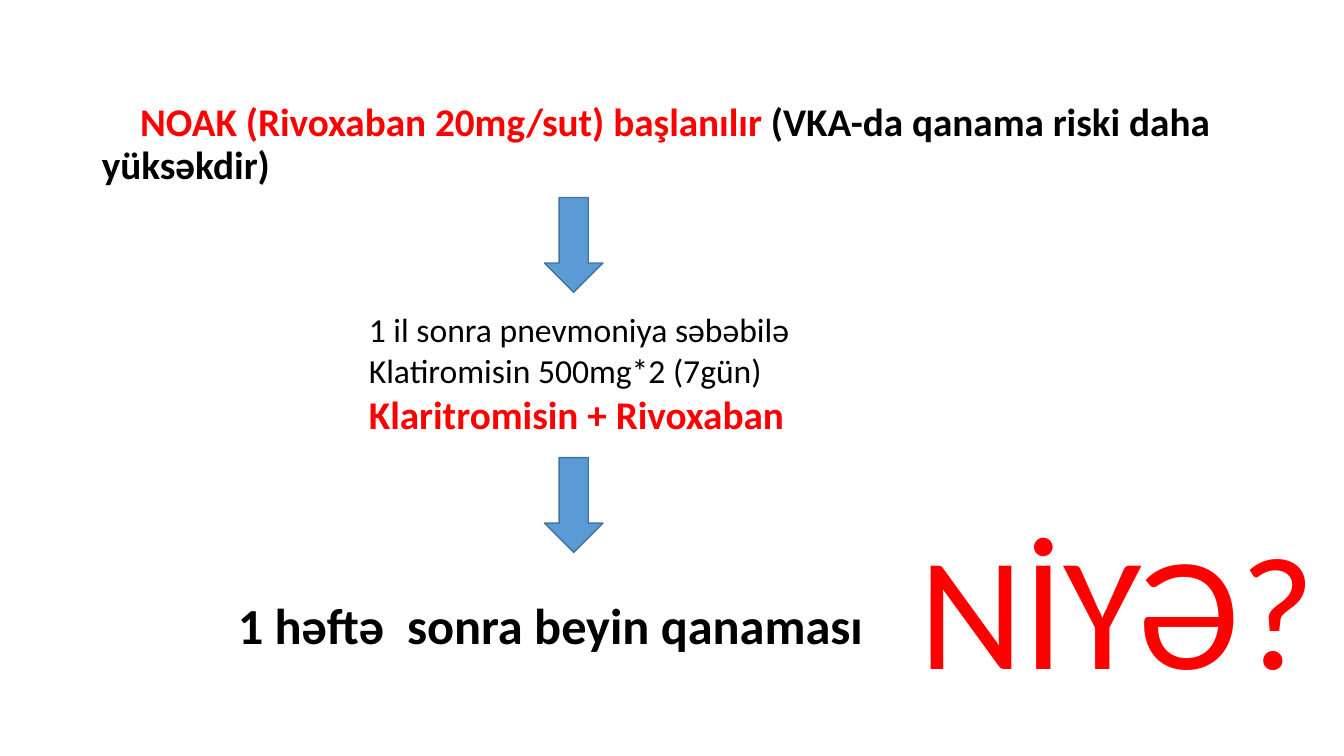
from dataclasses import dataclass

from pptx import Presentation
from pptx.dml.color import RGBColor
from pptx.enum.shapes import MSO_SHAPE
from pptx.enum.text import MSO_ANCHOR, MSO_AUTO_SIZE, PP_ALIGN
from pptx.util import Inches, Pt

DOWN_ARROW = MSO_SHAPE.DOWN_ARROW
TOP = MSO_ANCHOR.TOP
LEFT = PP_ALIGN.LEFT
NO_AUTOFIT = MSO_AUTO_SIZE.NONE
TITLE_ONLY_LAYOUT = 5


@dataclass(frozen=True)
class Theme:
    font: str = "Calibri"
    text: RGBColor = RGBColor(0, 0, 0)
    accent: RGBColor = RGBColor(0xFF, 0, 0)
    arrow_fill: RGBColor = RGBColor(0x5B, 0x9B, 0xD5)
    arrow_line: RGBColor = RGBColor(0x43, 0x73, 0x9E)
    body: int = 24
    heading: int = 28
    outcome: int = 36
    question: int = 115


THEME = Theme()


def place(shape, box):
    shape.left, shape.top, shape.width, shape.height = (Inches(value) for value in box)


def prepare_frame(shape):
    """Return the shape's text frame, wrapped and anchored at the top."""
    frame = shape.text_frame
    frame.word_wrap = True
    frame.auto_size = NO_AUTOFIT
    frame.vertical_anchor = TOP
    return frame


def write(paragraph, text, *, size, color=THEME.text, bold=False, indent=0):
    """Append a formatted run; indent shifts the first line, in inches."""
    paragraph.alignment = LEFT
    if indent:
        paragraph._p.get_or_add_pPr().set("indent", str(Inches(indent)))
    run = paragraph.add_run()
    run.text = text
    font = run.font
    font.name, font.size, font.bold = THEME.font, Pt(size), bold
    font.color.rgb = color


def add_text_box(slide, box):
    return prepare_frame(slide.shapes.add_textbox(*(Inches(value) for value in box)))


def add_treatment_title(slide, box):
    title = slide.shapes.title
    place(title, box)
    paragraph = prepare_frame(title).paragraphs[0]
    paragraph.line_spacing = 0.9
    write(paragraph, "NOAK (Rivoxaban 20mg/sut) başlanılır ", size=THEME.heading,
          color=THEME.accent, bold=True, indent=0.38)
    write(paragraph, "(VKA-da qanama riski daha yüksəkdir)", size=THEME.heading, bold=True)


def add_down_arrow(slide, box):
    arrow = slide.shapes.add_shape(DOWN_ARROW, *(Inches(value) for value in box))
    arrow.shadow.inherit = False
    arrow.fill.solid()
    arrow.fill.fore_color.rgb = THEME.arrow_fill
    arrow.line.color.rgb = THEME.arrow_line
    arrow.line.width = Pt(1)


def add_interaction(slide, box):
    frame = add_text_box(slide, box)
    write(frame.paragraphs[0], "1 il sonra pnevmoniya səbəbilə Klatiromisin 500mg*2 (7gün)",
          size=THEME.body)
    write(frame.add_paragraph(), "Klaritromisin + Rivoxaban", size=THEME.heading,
          color=THEME.accent, bold=True)


def add_outcome(slide, box):
    frame = add_text_box(slide, box)
    write(frame.paragraphs[0], "1 həftə  sonra beyin qanaması", size=THEME.outcome,
          bold=True, indent=0.79)


def add_question(slide, box):
    frame = add_text_box(slide, box)
    write(frame.paragraphs[0], "NİYƏ?", size=THEME.question, color=THEME.accent)


def main():
    presentation = Presentation()
    presentation.slide_width = Inches(13.33)
    presentation.slide_height = Inches(7.5)
    slide = presentation.slides.add_slide(presentation.slide_layouts[TITLE_ONLY_LAYOUT])

    add_treatment_title(slide, (0.91, 0.97, 12.05, 0.95))
    for arrow_top in (1.96, 4.54):
        add_down_arrow(slide, (5.4, arrow_top, 0.58, 0.94))
    add_interaction(slide, (3.56, 3.02, 5.01, 1.38))
    add_outcome(slide, (1.47, 5.84, 7.98, 0.71))
    add_question(slide, (9.02, 5, 4.31, 2.04))

    presentation.save("out.pptx")


if __name__ == "__main__":
    main()
